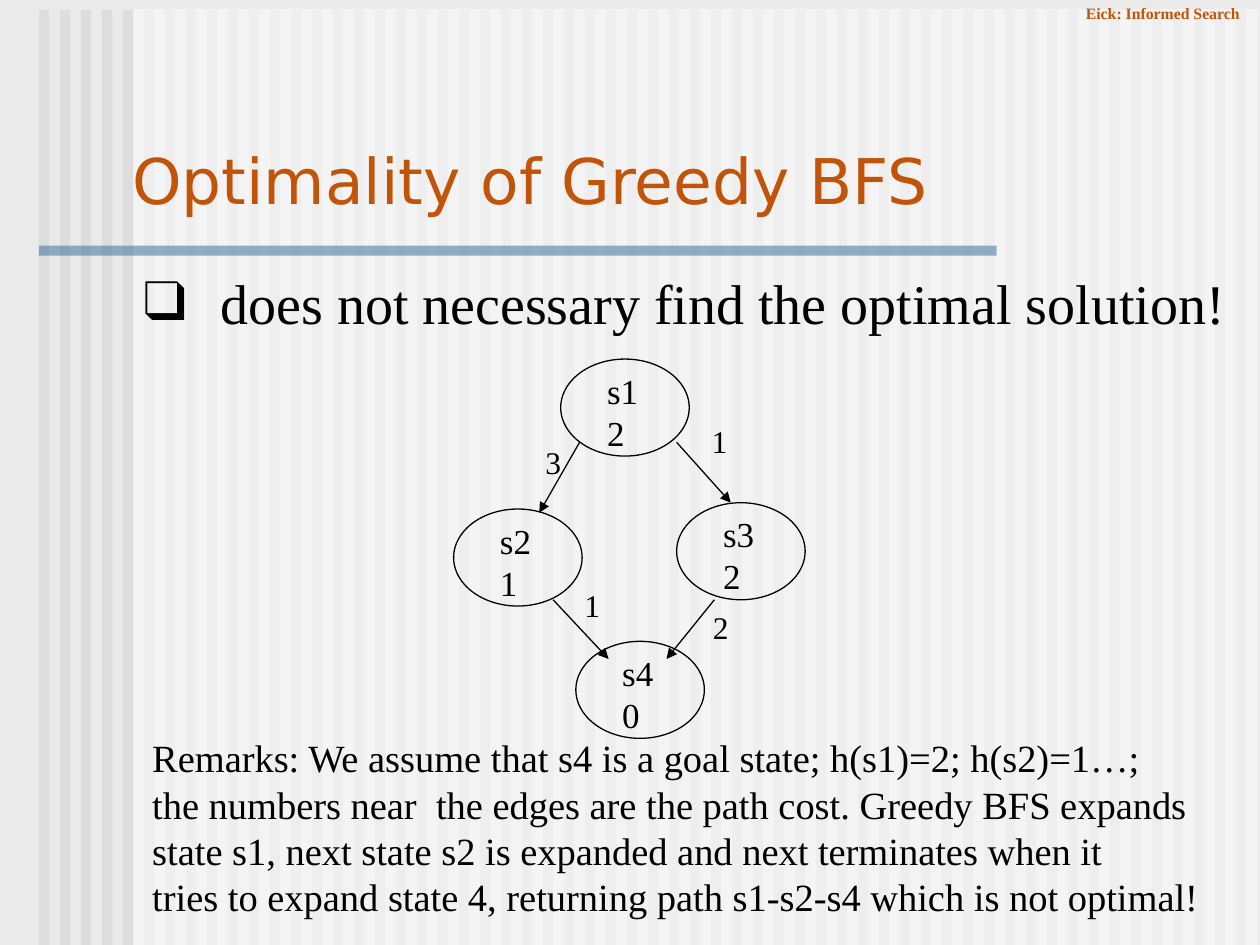
from lxml.etree import SubElement
from pptx import Presentation
from pptx.dml.color import RGBColor
from pptx.enum.shapes import MSO_CONNECTOR, MSO_SHAPE
from pptx.enum.text import MSO_ANCHOR, MSO_AUTO_SIZE, PP_ALIGN
from pptx.oxml.ns import qn
from pptx.util import Inches, Pt

# Content
HEADER = "Eick: Informed Search"
TITLE = "Optimality of Greedy BFS"
CLAIM = "does not necessary find the optimal solution!"
REMARKS = [
    "Remarks: We assume that s4 is a goal state; h(s1)=2; h(s2)=1…;",
    "the numbers near  the edges are the path cost. Greedy BFS expands",
    "state s1, next state s2 is expanded and next terminates when it",
    "tries to expand state 4, returning path s1-s2-s4 which is not optimal!",
]
# state, heuristic value, left, top
STATES = [
    ("s1", "2", 4.45, 2.85),
    ("s2", "1", 3.6, 4.04),
    ("s3", "2", 5.37, 3.99),
    ("s4", "0", 4.57, 5.09),
]
# start, end, path cost, left and top of the cost
EDGES = [
    ((4.6, 3.51), (4.28, 4.07), "3", (4.23, 3.47)),
    ((5.37, 3.51), (5.8, 3.99), "1", (5.55, 3.3)),
    ((4.39, 4.76), (4.83, 5.23), "1", (4.54, 4.6)),
    ((5.67, 4.76), (5.29, 5.23), "2", (5.56, 4.78)),
]

COLORS = {"background": "EAEAEA", "stripe": "DDDDDD", "veil": "FFFFFF",
          "rule": "336699", "accent": "C2540A", "ink": "000000"}
SERIF, SANS = "Times New Roman", "DejaVu Sans"
STRIPE_COUNT, STRIPE_LEFT, STRIPE_STEP, STRIPE_WIDTH = 59, 0.31, 1 / 6, 0.08
STATE_WIDTH, STATE_HEIGHT = 1.02, 0.77
LINE_WIDTH = 0.75


def color(name):
    return RGBColor.from_string(COLORS[name])


def add_bar(left, top, width, height, fill, alpha=None):
    bar = slide.shapes.add_shape(MSO_SHAPE.RECTANGLE, Inches(left), Inches(top),
                                 Inches(width), Inches(height))
    bar.shadow.inherit = False
    bar.line.fill.background()
    bar.fill.solid()
    bar.fill.fore_color.rgb = color(fill)
    if alpha is not None:
        rgb = bar.element.spPr.find(qn("a:solidFill")).find(qn("a:srgbClr"))
        SubElement(rgb, qn("a:alpha"), val=str(alpha * 1000))


def write(shape, lines, size, font=SERIF, ink="ink", bold=False,
          anchor=MSO_ANCHOR.TOP):
    frame = shape.text_frame
    frame.text = "\n".join(lines)
    frame.word_wrap = True
    frame.auto_size = MSO_AUTO_SIZE.NONE
    frame.vertical_anchor = anchor
    for paragraph in frame.paragraphs:
        paragraph.alignment = PP_ALIGN.LEFT
        paragraph.space_before = Pt(0)
        for run in paragraph.runs:
            run.font.size = Pt(size)
            run.font.name = font
            run.font.bold = bold
            run.font.color.rgb = color(ink)


def add_text(left, top, width, height, lines, size, **style):
    box = slide.shapes.add_textbox(Inches(left), Inches(top),
                                   Inches(width), Inches(height))
    write(box, lines, size, **style)


def place(shape, left, top, width, height):
    shape.left, shape.top = Inches(left), Inches(top)
    shape.width, shape.height = Inches(width), Inches(height)
    # Bring the placeholder in front of the backdrop
    shape.element.getparent().append(shape.element)


def add_state(name, value, left, top):
    oval = slide.shapes.add_shape(MSO_SHAPE.OVAL, Inches(left), Inches(top),
                                  Inches(STATE_WIDTH), Inches(STATE_HEIGHT))
    oval.shadow.inherit = False
    oval.fill.background()
    oval.line.color.rgb = color("ink")
    oval.line.width = Pt(LINE_WIDTH)
    add_text(left + 0.27, top + 0.03, 0.83, STATE_HEIGHT, [name, value], 20)


def add_arrow(start, end):
    arrow = slide.shapes.add_connector(
        MSO_CONNECTOR.STRAIGHT, *(Inches(value) for value in start + end))
    arrow.line.color.rgb = color("ink")
    arrow.line.width = Pt(LINE_WIDTH)
    SubElement(arrow.line._get_or_add_ln(), qn("a:tailEnd"), type="triangle")
    SubElement(arrow.element.spPr, qn("a:effectLst"))


presentation = Presentation()
presentation.slide_width, presentation.slide_height = Inches(10), Inches(7.5)
slide = presentation.slides.add_slide(presentation.slide_layouts[1])
slide.background.fill.solid()
slide.background.fill.fore_color.rgb = color("background")

# Striped backdrop, veil and rule under the title
for index in range(STRIPE_COUNT):
    left = STRIPE_LEFT + index * STRIPE_STEP
    add_bar(left, 0.08, min(STRIPE_WIDTH, 10 - left), 7.42, "stripe")
add_bar(1.06, 0.07, 8.94, 7.43, "veil", alpha=50)
add_bar(0.31, 1.95, 7.6, 0.08, "rule", alpha=50)

# Header and title
add_text(8.52, -0.02, 1.44, 0.25, [HEADER], 9, ink="accent", bold=True)
title = slide.shapes.title
place(title, 0.95, 1.07, 8.93, 0.7)
write(title, [TITLE], 36, font=SANS, ink="accent", anchor=MSO_ANCHOR.BOTTOM)

# Bulleted claim
body = slide.placeholders[1]
place(body, 1.04, 2.08, 8.99, 0.64)
write(body, [CLAIM], 32)
properties = body.text_frame.paragraphs[0]._p.get_or_add_pPr()
properties.set("marL", str(Inches(0.61)))
properties.set("indent", str(-Inches(0.61)))
SubElement(properties, qn("a:buFont"), typeface=SERIF)
SubElement(properties, qn("a:buChar"), char="❑")

# Search graph
for state in STATES:
    add_state(*state)
for start, end, cost, (left, top) in EDGES:
    add_arrow(start, end)
    add_text(left, top, 0.42, 0.4, [cost], 18)

# Remarks
add_text(1.11, 5.78, 8.83, 1.58, REMARKS, 22)

presentation.save("out.pptx")
